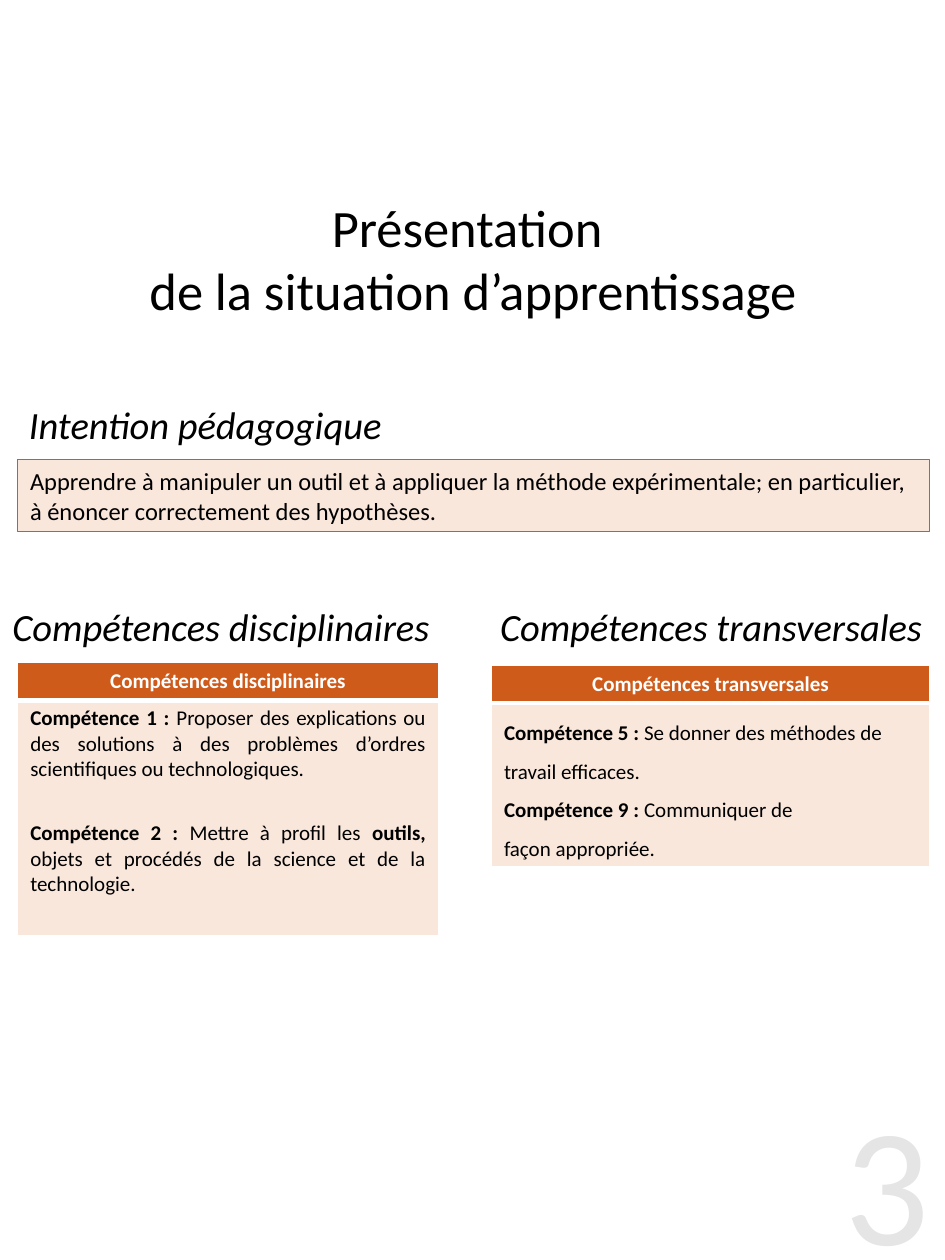
from pptx import Presentation
from pptx.dml.color import RGBColor
from pptx.enum.shapes import MSO_SHAPE
from pptx.enum.text import MSO_ANCHOR, MSO_AUTO_SIZE, PP_ALIGN
from pptx.oxml.ns import qn
from pptx.util import Inches, Pt
from lxml.etree import SubElement

COLORS = {
    "text": "000000",
    "white": "FFFFFF",
    "orange": "CF5B1B",
    "peach": "FAE7DC",
    "number": "E5E5E5",
}
DISCIPLINARY = [
    [("Compétence 1 : ", True),
     ("Proposer des explications ou des solutions à des problèmes "
      "d’ordres scientifiques ou technologiques.", False)],
    [("Compétence 2 : ", True), ("Mettre à profil les ", False),
     ("outils, ", True),
     ("objets et procédés de la science et de la technologie.", False)],
]
TRANSVERSAL = [
    [("Compétence 5 : ", True),
     ("Se donner des méthodes de travail efficaces.", False)],
    [("Compétence 9 : ", True), ("Communiquer de", False)],
    [("façon appropriée.", False)],
]


def rgb(name):
    return RGBColor.from_string(COLORS[name])


def place(element, left, top, width, height):
    element.left, element.top = Inches(left), Inches(top)
    element.width, element.height = Inches(width), Inches(height)


def style(paragraph, size, color="text", bold=None, italic=None, align=None):
    paragraph.alignment = align
    font = paragraph.font
    font.name, font.size = "Calibri", Pt(size)
    font.bold, font.italic = bold, italic
    font.color.rgb = rgb(color)


def add_title(slide, text):
    title = slide.shapes.title
    place(title, -0.13, 1.45, 7.77, 1.2)
    title.text_frame.text = text
    title.text_frame.vertical_anchor = MSO_ANCHOR.MIDDLE
    style(title.text_frame.paragraphs[0], 30, align=PP_ALIGN.CENTER)


def add_intention_heading(slide, text):
    heading = slide.placeholders[1]
    place(heading, 0.13, 3.13, 3.34, 0.52)
    heading.text_frame.text = text
    heading.text_frame.auto_size = MSO_AUTO_SIZE.NONE
    paragraph = heading.text_frame.paragraphs[0]
    properties = paragraph._p.get_or_add_pPr()
    properties.set("marL", "0")
    properties.set("indent", "0")
    SubElement(properties, qn("a:buNone"))
    paragraph.space_before = Pt(0)
    style(paragraph, 22, italic=True)


def add_heading(slide, text, left):
    heading = slide.shapes.add_textbox(
        Inches(left), Inches(4.74), Inches(3.75), Inches(0.47))
    heading.text_frame.word_wrap = True
    heading.text_frame.text = text
    style(heading.text_frame.paragraphs[0], 22, italic=True)


def add_intention(slide, text):
    intention = slide.shapes.add_shape(
        MSO_SHAPE.RECTANGLE,
        Inches(0.14), Inches(3.65), Inches(7.24), Inches(0.57))
    intention.shadow.inherit = False
    intention.fill.solid()
    intention.fill.fore_color.rgb = rgb("peach")
    intention.line.color.rgb = rgb("orange")
    intention.line.width = Pt(0.75)
    intention.text_frame.word_wrap = True
    intention.text_frame.text = text
    style(intention.text_frame.paragraphs[0], 14, align=PP_ALIGN.LEFT)


def format_cell(cell, fill, widths):
    properties = cell._tc.get_or_add_tcPr()
    for side, width in zip("LRTB", widths):
        border = SubElement(properties, qn(f"a:ln{side}"), w=str(Pt(width)))
        paint = SubElement(border, qn("a:solidFill"))
        SubElement(paint, qn("a:srgbClr"), val=COLORS["white"])
    cell.fill.solid()
    cell.fill.fore_color.rgb = rgb(fill)
    cell.margin_top = cell.margin_bottom = Inches(0.04)


def add_competences(slide, title, items, left, top, width, body_height,
                    align, line_spacing=None, gap=0):
    header_height = 0.3
    table = slide.shapes.add_table(
        2, 1, Inches(left), Inches(top), Inches(width),
        Inches(header_height + body_height)).table
    table.rows[0].height = Inches(header_height)
    table.rows[1].height = Inches(body_height)
    header, body = table.cell(0, 0), table.cell(1, 0)

    format_cell(header, "orange", (1, 1, 1, 3))
    header.vertical_anchor = MSO_ANCHOR.MIDDLE
    header.text = title
    style(header.text_frame.paragraphs[0], 12, "white", bold=True,
          align=PP_ALIGN.CENTER)

    format_cell(body, "peach", (1, 1, 3, 1))
    for index, parts in enumerate(items):
        frame = body.text_frame
        paragraph = frame.add_paragraph() if index else frame.paragraphs[0]
        for text, bold in parts:
            run = paragraph.add_run()
            run.text = text
            run.font.bold = bold
        paragraph.line_spacing = line_spacing
        if index and gap:
            paragraph.space_before = Pt(gap)
        style(paragraph, 12, align=align)


def add_page_number(slide, number):
    page = slide.shapes.add_textbox(
        Inches(6.3), Inches(8.55), Inches(1.08), Inches(1.45))
    frame = page.text_frame
    frame.word_wrap = True
    frame.margin_left = frame.margin_right = 0
    frame.margin_top = frame.margin_bottom = 0
    frame.text = number
    style(frame.paragraphs[0], 96, "number", align=PP_ALIGN.RIGHT)


def main():
    presentation = Presentation()
    presentation.slide_width = Inches(7.5)
    presentation.slide_height = Inches(10)
    slide = presentation.slides.add_slide(presentation.slide_layouts[1])

    add_title(slide, "Présentation \vde la situation d’apprentissage")
    add_intention_heading(slide, "Intention pédagogique")
    add_intention(
        slide,
        "Apprendre à manipuler un outil et à appliquer la méthode "
        "expérimentale; en particulier, à énoncer correctement des "
        "hypothèses.")
    add_heading(slide, "Compétences transversales", 3.87)
    add_competences(slide, "Compétences transversales", TRANSVERSAL,
                    3.9, 5.28, 3.48, 1.3, PP_ALIGN.LEFT, line_spacing=1.5)
    add_competences(slide, "Compétences disciplinaires", DISCIPLINARY,
                    0.14, 5.26, 3.34, 1.87, PP_ALIGN.JUSTIFY, gap=22)
    add_heading(slide, "Compétences disciplinaires", 0)
    add_page_number(slide, "3")
    presentation.save("out.pptx")


if __name__ == "__main__":
    main()
